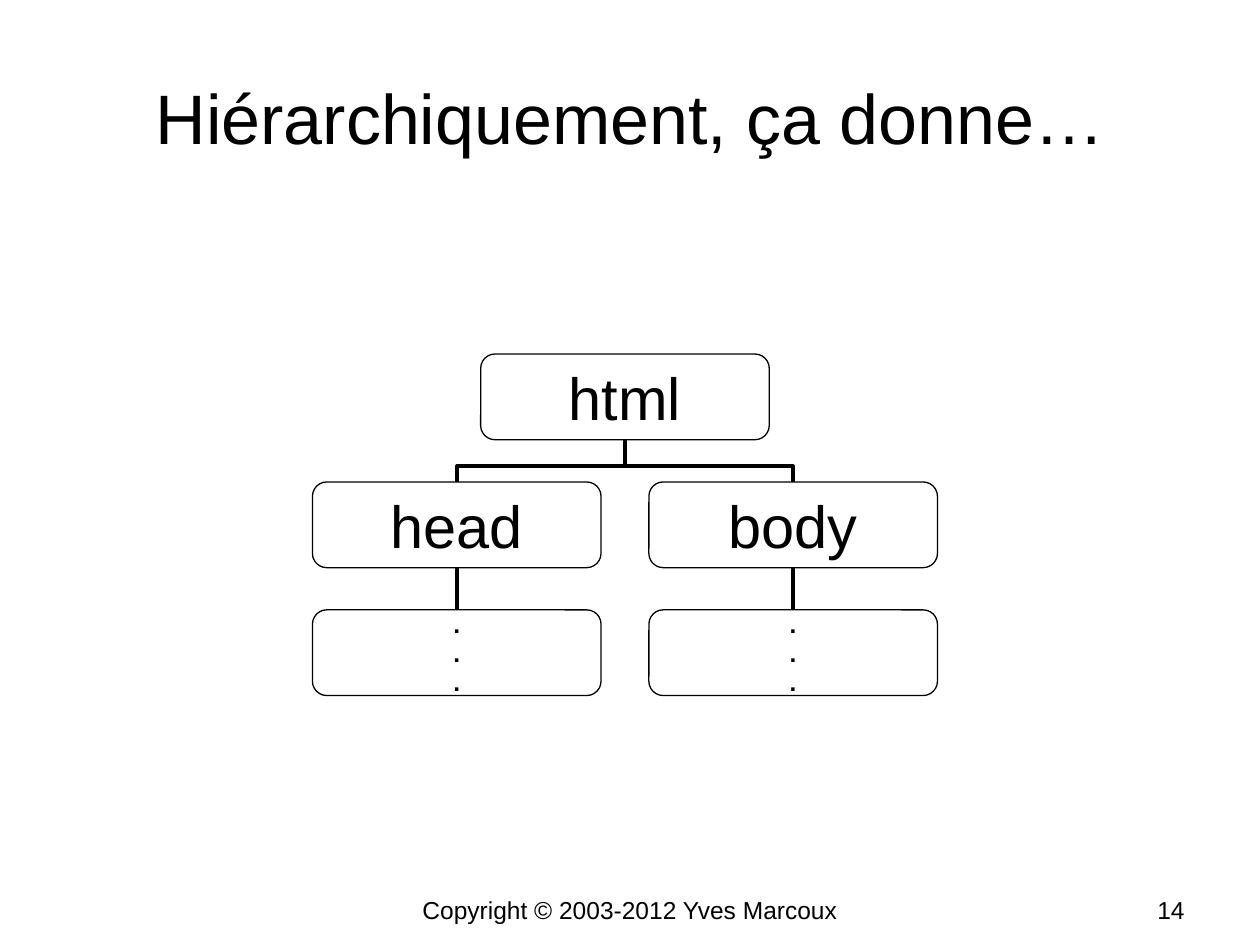
from lxml.etree import SubElement
from pptx import Presentation
from pptx.dml.color import RGBColor
from pptx.enum.shapes import MSO_CONNECTOR, MSO_SHAPE
from pptx.enum.text import MSO_ANCHOR, PP_ALIGN
from pptx.oxml.ns import qn
from pptx.util import Inches, Pt

COLORS = {"ink": "000000", "paper": "FFFFFF"}
NODE_W, NODE_H = 2.29, 0.68
LEFT, TOP = 2.48, 2.81
COLUMN_STEP, ROW_STEP = 2.67, 1.015


class TreeSlide:
    """Draws the parts of a tree slide in one style."""

    font = "Arial"

    def __init__(self, slide):
        self.slide = slide
        slide.background.fill.solid()
        slide.background.fill.fore_color.rgb = self.color("paper")

    def color(self, name):
        return RGBColor.from_string(COLORS[name])

    def add_lines(self, frame, lines, size, align, anchor, bold=False):
        frame.vertical_anchor = anchor
        for index, line in enumerate(lines):
            paragraph = frame.paragraphs[0] if index == 0 else frame.add_paragraph()
            paragraph.alignment = align
            run = paragraph.add_run()
            run.text = line
            run.font.name = self.font
            run.font.size = Pt(size)
            run.font.bold = bold
            run.font.color.rgb = self.color("ink")

    def label(self, text, box, size, align=PP_ALIGN.CENTER, anchor=MSO_ANCHOR.BOTTOM):
        frame = self.slide.shapes.add_textbox(*map(Inches, box)).text_frame
        frame.word_wrap = True
        self.add_lines(frame, [text], size, align, anchor)

    def node(self, lines, column, row, size=34, bold=False):
        node = self.slide.shapes.add_shape(
            MSO_SHAPE.ROUNDED_RECTANGLE,
            Inches(LEFT + column * COLUMN_STEP), Inches(TOP + row * ROW_STEP),
            Inches(NODE_W), Inches(NODE_H))
        node.shadow.inherit = False
        node.fill.background()
        node.line.color.rgb = self.color("ink")
        node.line.width = Pt(0.75)
        frame = node.text_frame
        frame.word_wrap = False
        frame.margin_left = frame.margin_right = 0
        frame.margin_top = frame.margin_bottom = 0
        self.add_lines(frame, lines, size, PP_ALIGN.CENTER, MSO_ANCHOR.MIDDLE, bold)
        return node

    def connector(self, kind, *ends):
        link = self.slide.shapes.add_connector(kind, *ends)
        link.line.color.rgb = self.color("ink")
        link.line.width = Pt(2.25)
        SubElement(link._element.spPr, qn("a:effectLst"))
        return link

    def straight(self, child, parent):
        link = self.connector(MSO_CONNECTOR.STRAIGHT, 0, 0, 0, 0)
        link.begin_connect(child, 0)
        link.end_connect(parent, 2)

    def elbow(self, child, parent):
        child_x = child.left + child.width // 2
        parent_x = parent.left + parent.width // 2
        parent_y = parent.top + parent.height
        half_rise = (child.top - parent_y) // 2
        half_run = abs(child_x - parent_x) // 2
        middle_x, middle_y = (child_x + parent_x) // 2, parent_y + half_rise
        side = 1 if child_x > parent_x else -1
        link = self.connector(
            MSO_CONNECTOR.ELBOW,
            middle_x + side * half_rise, middle_y - half_run,
            middle_x - side * half_rise, middle_y + half_run)
        link_frame = link._element.spPr.find(qn("a:xfrm"))
        link_frame.set("rot", str((90 if side > 0 else 270) * 60000))
        outline = link._element.spPr.find(qn("a:prstGeom"))
        guides = outline.find(qn("a:avLst"))
        if guides is None:
            guides = SubElement(outline, qn("a:avLst"))
        SubElement(guides, qn("a:gd"), name="adj1", fmla="val 36900")


def main():
    presentation = Presentation()
    presentation.slide_width, presentation.slide_height = Inches(10), Inches(7.5)
    tree = TreeSlide(presentation.slides.add_slide(presentation.slide_layouts[6]))

    tree.label("Copyright © 2003-2012 Yves Marcoux", (1.77, 7.18, 6.46, 0.21), 14)
    tree.label("14", (7.17, 7.18, 2.33, 0.21), 14, PP_ALIGN.RIGHT)
    tree.label("Hiérarchiquement, ça donne…", (0.5, 0.3, 9, 1.25), 40,
               anchor=MSO_ANCHOR.MIDDLE)

    root = tree.node(["html"], 0.5, 0)
    for column, name in enumerate(("head", "body")):
        branch = tree.node([name], column, 1)
        content = tree.node(["."] * 3, column, 2, size=14, bold=True)
        tree.elbow(branch, root)
        tree.straight(content, branch)

    presentation.save("out.pptx")


if __name__ == "__main__":
    main()
